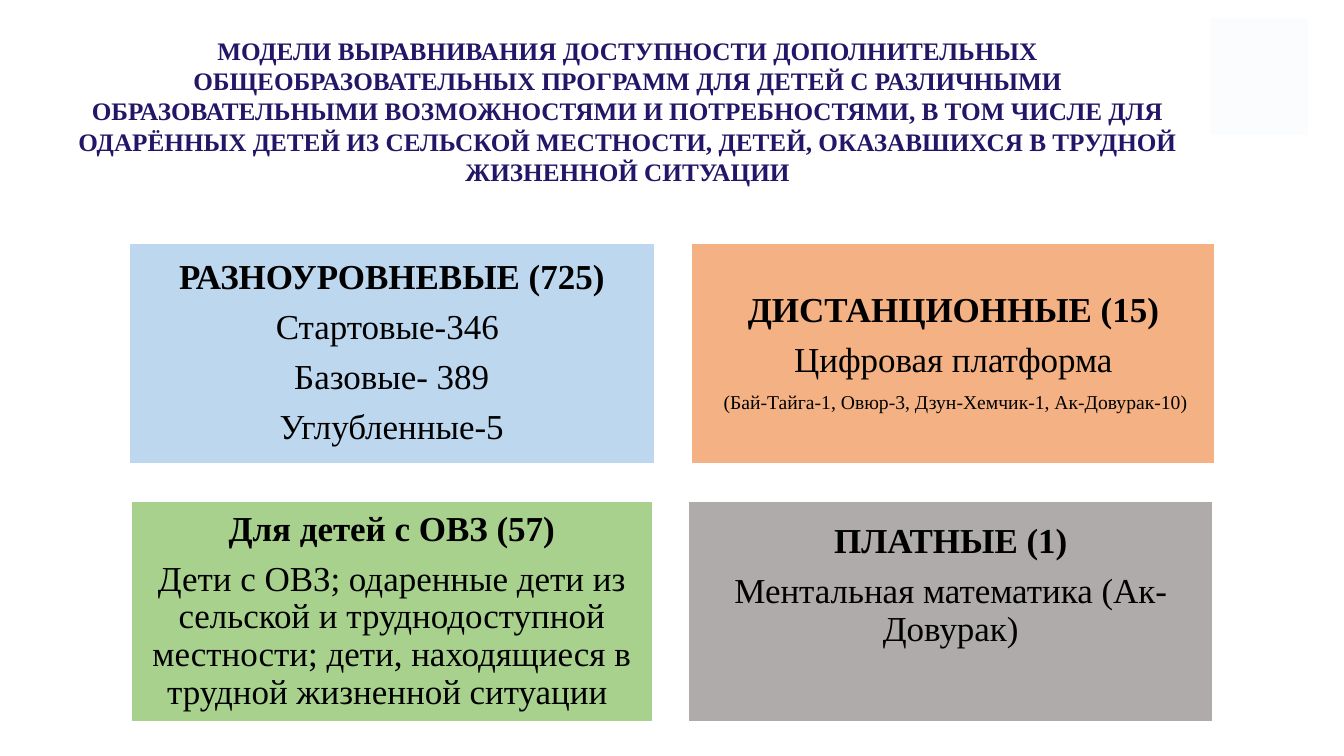
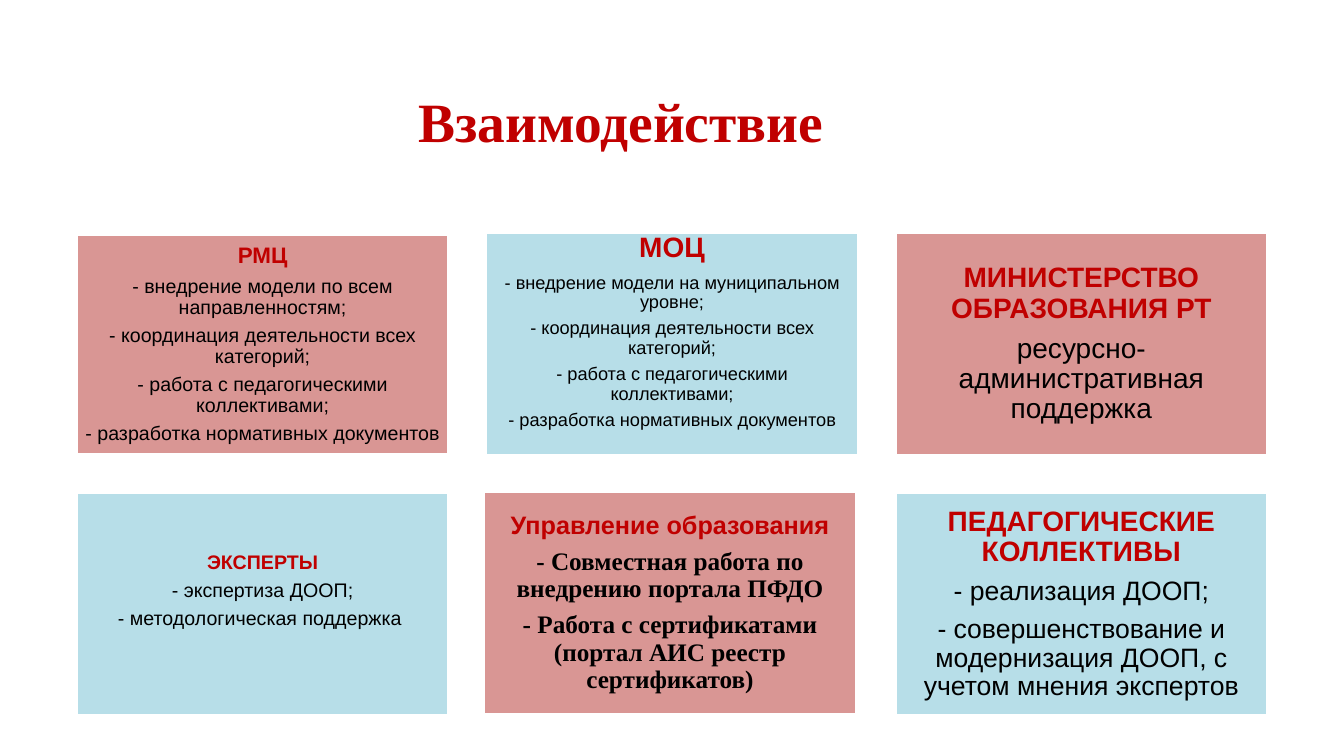
from dataclasses import dataclass

from pptx import Presentation
from pptx import util as u
from pptx.dml import color
from pptx.enum import shapes, text


@dataclass(frozen=True)
class Theme:
    serif: str = "Times New Roman"
    sans: str = "Arial"
    black: str = "000000"
    white: str = "FFFFFF"
    navy: str = "221668"
    red: str = "C00000"
    rose: str = "D99694"
    aqua: str = "B7DEE8"
    blue: str = "BDD7EE"
    orange: str = "F4B183"
    green: str = "A9D18E"
    grey: str = "AFABAB"
    pale: str = "FBFCFE"
    long_title: float = 18
    short_title: float = 39.6
    model: float = 25
    note: float = 14
    line_spacing: float = 0.9
    gap_ratio: float = 0.35


THEME = Theme()


@dataclass(frozen=True)
class Style:
    size: float
    font: str
    color: str = THEME.black
    bold: bool = False


@dataclass(frozen=True)
class Line:
    text: str
    style: Style


@dataclass(frozen=True)
class Box:
    left: float
    top: float
    width: float
    height: float


@dataclass(frozen=True)
class Insets:
    left: float
    top: float
    right: float
    bottom: float


@dataclass(frozen=True)
class Card:
    box: Box
    fill: str
    lines: list[Line]
    inset: float
    lift: float = 0  # extra room below the text
    border: float = 2


def rgb(value: str) -> color.RGBColor:
    return color.RGBColor.from_string(value)


def lengths(box: Box) -> tuple[u.Length, ...]:
    return tuple(u.Inches(side) for side in (box.left, box.top, box.width, box.height))


def write_lines(shape, lines: list[Line], insets: Insets, spacing: float = 1.0) -> None:
    frame = shape.text_frame
    frame.word_wrap = True
    frame.vertical_anchor = text.MSO_ANCHOR.MIDDLE
    frame.margin_left, frame.margin_top = u.Inches(insets.left), u.Inches(insets.top)
    frame.margin_right, frame.margin_bottom = u.Inches(insets.right), u.Inches(insets.bottom)
    frame.text = "\n".join(line.text for line in lines)
    for paragraph, line in zip(frame.paragraphs, lines):
        paragraph.alignment = text.PP_ALIGN.CENTER
        paragraph.line_spacing = spacing
        if line is not lines[-1]:
            paragraph.space_after = u.Pt(round(line.style.size * THEME.gap_ratio, 1))
        for run in paragraph.runs:
            run.font.size = u.Pt(line.style.size)
            run.font.name = line.style.font
            run.font.bold = line.style.bold
            run.font.color.rgb = rgb(line.style.color)


def add_title(slide, box: Box, line: Line, insets: Insets) -> None:
    write_lines(slide.shapes.add_textbox(*lengths(box)), [line], insets)


def add_rectangle(slide, box: Box, fill: str, border_color: str, border: float):
    shape = slide.shapes.add_shape(shapes.MSO_SHAPE.RECTANGLE, *lengths(box))
    shape.shadow.inherit = False
    shape.fill.solid()
    shape.fill.fore_color.rgb = rgb(fill)
    shape.line.color.rgb = rgb(border_color)
    shape.line.width = u.Pt(border)
    return shape


def add_card(slide, card: Card) -> None:
    shape = add_rectangle(slide, card.box, card.fill, THEME.white, card.border)
    insets = Insets(card.inset, 0 if card.lift else card.inset, card.inset,
                    card.lift or card.inset)
    write_lines(shape, card.lines, insets, THEME.line_spacing)


def headed(heading: str, heading_style: Style, body: list[str], body_style: Style) -> list[Line]:
    return [Line(heading, heading_style), *(Line(item, body_style) for item in body)]


def model_cards() -> list[Card]:
    heading = Style(THEME.model, THEME.serif, bold=True)
    body = Style(THEME.model, THEME.serif)
    note = Style(THEME.note, THEME.serif)
    top, bottom, height = 2.41, 4.97, 2.19
    levels = headed("РАЗНОУРОВНЕВЫЕ (725)", heading,
                    ["Стартовые-346 ", "Базовые- 389", "Углубленные-5"], body)
    remote = headed("ДИСТАНЦИОННЫЕ (15)", heading, ["Цифровая платформа"], body)
    remote.append(Line(" (Бай-Тайга-1, Овюр-3, Дзун-Хемчик-1, Ак-Довурак-10)", note))
    special = headed("Для детей с ОВЗ (57)", heading, [
        "Дети с ОВЗ; одаренные дети из сельской и труднодоступной местности; "
        "дети, находящиеся в трудной жизненной ситуации "], body)
    paid = headed("ПЛАТНЫЕ (1)", heading, ["Ментальная математика (Ак-Довурак)"], body)
    return [
        Card(Box(1.28, top, 5.21, height), THEME.blue, levels, 0.1, border=1),
        Card(Box(6.86, top, 5.19, height), THEME.orange, remote, 0.1, border=1),
        Card(Box(1.3, bottom, 5.17, height), THEME.green, special, 0.1, border=1),
        Card(Box(6.83, bottom, 5.2, height), THEME.grey, paid, 0.1, lift=0.5, border=1),
    ]


@dataclass(frozen=True)
class Partner:
    name: str
    name_size: float
    tasks: list[str]
    task_style: Style
    inset: float = 0.08
    lift: float = 0
    shift_x: float = 0
    shift_y: float = 0
    height: float = 2.21


SHARED_TASKS = [
    "- координация деятельности всех категорий;",
    "- работа с педагогическими коллективами;",
    "- разработка нормативных документов",
]

PARTNERS = [
    Partner("РМЦ", 16, ["- внедрение модели по всем направленностям;", *SHARED_TASKS],
            Style(14, THEME.sans), inset=0.07, shift_y=0.02, height=2.18),
    Partner("МОЦ", 20, ["- внедрение модели на муниципальном уровне;", *SHARED_TASKS],
            Style(13, THEME.sans), lift=0.25),
    Partner("МИНИСТЕРСТВО ОБРАЗОВАНИЯ РТ", 20, ["ресурсно-административная поддержка"],
            Style(20, THEME.sans)),
    Partner("ЭКСПЕРТЫ", 14, ["- экспертиза ДООП;", "- методологическая поддержка "],
            Style(14, THEME.sans), inset=0.06, lift=0.27),
    Partner("Управление образования", 18,
            ["- Совместная работа по внедрению портала ПФДО",
             "- Работа с сертификатами (портал АИС реестр сертификатов)"],
            Style(18, THEME.serif, bold=True), inset=0.15, shift_x=-0.02, shift_y=-0.01),
    Partner("ПЕДАГОГИЧЕСКИЕ КОЛЛЕКТИВЫ", 20,
            ["- реализация ДООП;",
             "- совершенствование и модернизация ДООП, с учетом мнения экспертов"],
            Style(19, THEME.sans)),
]


def partner_card(index: int, partner: Partner) -> Card:
    """Place a partner in the three-column grid, with alternating fills."""
    row, column = divmod(index, 3)
    box = Box(0.76 + 4.06 * column + partner.shift_x, 2.31 + 2.58 * row + partner.shift_y,
              3.69, partner.height)
    name_style = Style(partner.name_size, THEME.sans, THEME.red, True)
    return Card(box, (THEME.rose, THEME.aqua)[index % 2],
                headed(partner.name, name_style, partner.tasks, partner.task_style),
                partner.inset, partner.lift)


def build_models_slide(slide) -> None:
    title = Line(
        "МОДЕЛИ ВЫРАВНИВАНИЯ ДОСТУПНОСТИ ДОПОЛНИТЕЛЬНЫХ ОБЩЕОБРАЗОВАТЕЛЬНЫХ ПРОГРАММ "
        "ДЛЯ ДЕТЕЙ С РАЗЛИЧНЫМИ ОБРАЗОВАТЕЛЬНЫМИ ВОЗМОЖНОСТЯМИ И ПОТРЕБНОСТЯМИ, В ТОМ "
        "ЧИСЛЕ ДЛЯ ОДАРЁННЫХ ДЕТЕЙ ИЗ СЕЛЬСКОЙ МЕСТНОСТИ, ДЕТЕЙ, ОКАЗАВШИХСЯ В ТРУДНОЙ "
        "ЖИЗНЕННОЙ СИТУАЦИИ",
        Style(THEME.long_title, THEME.serif, THEME.navy, True))
    add_title(slide, Box(0.34, 0.45, 11.77, 1.59), title, Insets(0.13, 0, 0.13, 0.29))
    add_rectangle(slide, Box(12.02, 0.19, 0.94, 1.14), THEME.pale, THEME.pale, 2)
    for card in model_cards():
        add_card(slide, card)


def build_partners_slide(slide) -> None:
    title = Line("Взаимодействие", Style(THEME.short_title, THEME.serif, THEME.red, True))
    add_title(slide, Box(1.42, 0.41, 9.75, 1.47), title, Insets(0.1, 0.14, 0.37, 0.05))
    for index, partner in enumerate(PARTNERS):
        add_card(slide, partner_card(index, partner))


def main() -> None:
    presentation = Presentation()
    presentation.slide_width = u.Inches(13.33)
    presentation.slide_height = u.Inches(7.5)
    blank = presentation.slide_layouts[6]
    for build in (build_models_slide, build_partners_slide):
        build(presentation.slides.add_slide(blank))
    presentation.save("out.pptx")


if __name__ == "__main__":
    main()
